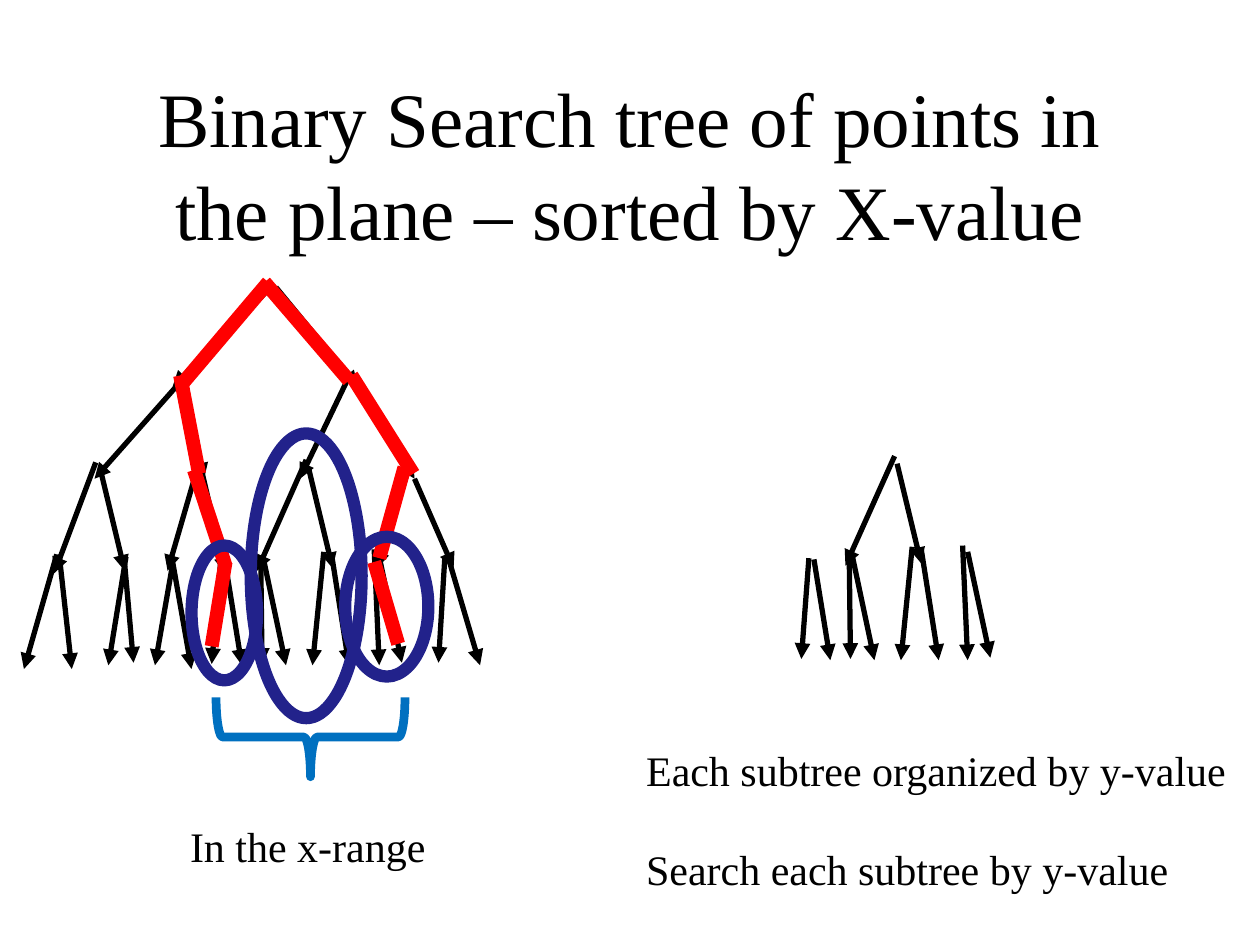
from lxml.etree import SubElement
from pptx import Presentation
from pptx.dml.color import RGBColor
from pptx.enum.shapes import MSO_CONNECTOR, MSO_SHAPE
from pptx.enum.text import MSO_ANCHOR, PP_ALIGN
from pptx.oxml.ns import qn
from pptx.util import Inches, Pt

BLACK = RGBColor(0x00, 0x00, 0x00)
RED = RGBColor(0xFF, 0x00, 0x00)
NAVY = RGBColor(0x22, 0x22, 0x8B)
BLUE = RGBColor(0x00, 0x70, 0xC0)

x_tree_edges = [
    (2.15, 2.28, 1.37, 3.07), (2.19, 2.28, 2.84, 3.07),
    (1.45, 3.01, 0.75, 3.8), (1.43, 3.01, 1.62, 3.8),
    (2.76, 3.01, 2.38, 3.8), (2.84, 3.03, 3.29, 3.8),
    (0.76, 3.67, 0.43, 4.55), (0.8, 3.74, 0.99, 4.53),
    (1.58, 3.67, 1.33, 4.53), (1.59, 3.69, 1.79, 4.55),
    (2.43, 3.65, 2.04, 4.53), (2.45, 3.72, 2.64, 4.51),
    (3.26, 3.67, 2.99, 4.51), (3.29, 3.8, 3.6, 4.51),
    (0.45, 4.4, 0.19, 5.31), (0.47, 4.4, 0.57, 5.31),
    (1, 4.42, 0.86, 5.28), (0.99, 4.48, 1.06, 5.26),
    (1.37, 4.48, 1.23, 5.28), (1.36, 4.4, 1.52, 5.31),
    (1.75, 4.47, 1.68, 5.27), (1.79, 4.48, 1.92, 5.28),
    (2.07, 4.45, 2.08, 5.27), (2.09, 4.43, 2.27, 5.28),
    (2.57, 4.38, 2.48, 5.28), (2.63, 4.39, 2.77, 5.28),
    (2.97, 4.36, 3.01, 5.28), (3.01, 4.42, 3.19, 5.26),
    (3.53, 4.43, 3.48, 5.26), (3.55, 4.4, 3.81, 5.28),
]
search_paths = [
    (1.54, 3.73, 1.79, 4.49), (2.1, 2.24, 2.77, 3.02),
    (2.13, 2.24, 1.46, 3.03), (1.43, 2.98, 1.58, 3.76),
    (1.79, 4.46, 1.68, 5.13), (2.97, 4.46, 3.16, 5.11),
    (2.79, 2.98, 3.28, 3.76), (3.21, 3.71, 3.01, 4.43),
]
y_tree_edges = [
    (7.1, 3.62, 6.71, 4.49), (7.12, 3.68, 7.31, 4.47),
    (6.42, 4.43, 6.36, 5.23), (6.46, 4.44, 6.59, 5.24),
    (6.74, 4.41, 6.75, 5.23), (6.76, 4.39, 6.94, 5.24),
    (7.24, 4.34, 7.15, 5.24), (7.31, 4.35, 7.45, 5.24),
    (7.64, 4.33, 7.68, 5.24), (7.68, 4.38, 7.86, 5.22),
]
outlines = [
    (MSO_SHAPE.RIGHT_BRACE, 2.15, 5.1, 0.63, 1.5, BLUE, 5),
    (MSO_SHAPE.OVAL, 1.52, 4.33, 0.52, 1.07, NAVY, 7),
    (MSO_SHAPE.OVAL, 1.99, 3.44, 0.88, 2.26, NAVY, 7),
    (MSO_SHAPE.OVAL, 2.74, 4.26, 0.66, 1.11, NAVY, 7),
]
texts = [
    (0.75, 0.67, 8.5, 1.25, 44, PP_ALIGN.CENTER, MSO_ANCHOR.MIDDLE, True,
     ["Binary Search tree of points in the plane – sorted by X-value"]),
    (1.41, 6.46, 2.09, 0.5, 24, PP_ALIGN.LEFT, MSO_ANCHOR.TOP, False,
     ["In the x-range"]),
    (5.03, 5.86, 4.83, 1.31, 24, PP_ALIGN.LEFT, MSO_ANCHOR.TOP, False,
     ["Each subtree organized by y-value", "Search each subtree by y-value"]),
]

presentation = Presentation()
presentation.slide_width = Inches(10)
presentation.slide_height = Inches(7.5)
slide = presentation.slides.add_slide(presentation.slide_layouts[6])

for edges, color, width, arrow in [
    (x_tree_edges, BLACK, 3, True),
    (search_paths, RED, 8, False),
    (y_tree_edges, BLACK, 3, True),
]:
    for edge in edges:
        connector = slide.shapes.add_connector(
            MSO_CONNECTOR.STRAIGHT, *[Inches(value) for value in edge])
        connector.line.color.rgb = color
        connector.line.width = Pt(width)
        if arrow:
            SubElement(connector.line._get_or_add_ln(), qn("a:tailEnd"), type="triangle")
        SubElement(connector._element.spPr, qn("a:effectLst"))

for kind, left, top, width, height, color, weight in outlines:
    shape = slide.shapes.add_shape(
        kind, Inches(left), Inches(top), Inches(width), Inches(height))
    shape.shadow.inherit = False
    shape.fill.background()
    shape.line.color.rgb = color
    shape.line.width = Pt(weight)
    if kind == MSO_SHAPE.RIGHT_BRACE:
        shape.rotation = 270
        shape._element.spPr.xfrm.set("flipH", "1")

for left, top, width, height, size, alignment, anchor, wrap, lines in texts:
    box = slide.shapes.add_textbox(
        Inches(left), Inches(top), Inches(width), Inches(height))
    frame = box.text_frame
    frame.word_wrap = wrap
    frame.vertical_anchor = anchor
    frame.text = "\n".join(lines)
    for index, paragraph in enumerate(frame.paragraphs):
        paragraph.alignment = alignment
        paragraph.font.name = "Times New Roman"
        paragraph.font.size = Pt(size)
        paragraph.font.color.rgb = BLACK
        if index:
            paragraph.space_before = Pt(28)

presentation.save("out.pptx")
